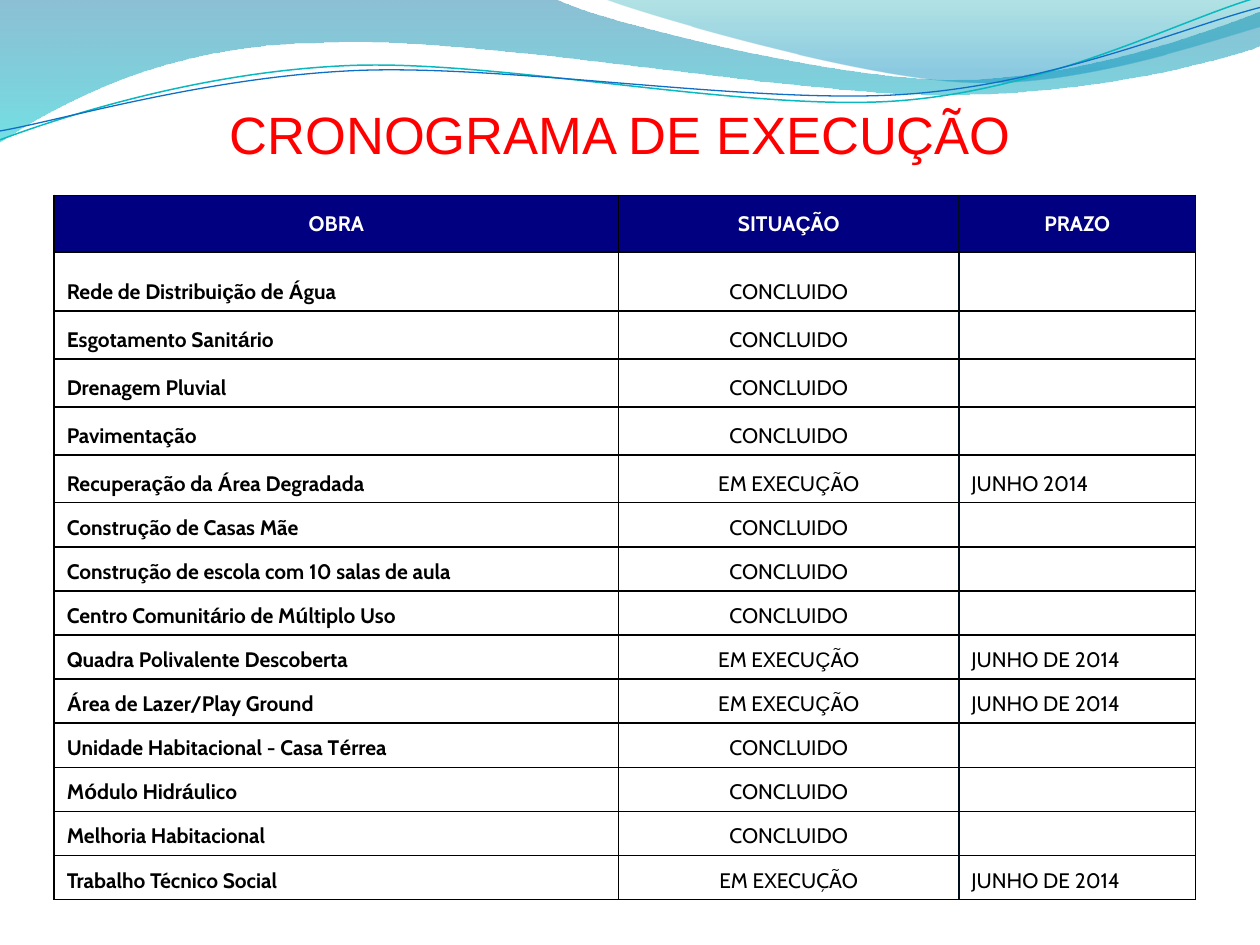
from dataclasses import dataclass
from itertools import groupby
from math import cos, radians, sin

from lxml import etree
from pptx import Presentation
from pptx.dml.color import RGBColor
from pptx.enum.text import MSO_ANCHOR, PP_ALIGN
from pptx.oxml.ns import qn
from pptx.util import Inches, Pt

LEFT, CENTER = PP_ALIGN.LEFT, PP_ALIGN.CENTER
MIDDLE, BOTTOM = MSO_ANCHOR.MIDDLE, MSO_ANCHOR.BOTTOM


@dataclass(frozen=True)
class Theme:
    title_font: str = "Arial"
    body_font: str = "Cabin"
    accent_font: str = "Arial"
    title_size: int = 30
    body_size: int = 12
    title: str = "FF0000"
    text: str = "000000"
    header_text: str = "FFFFFF"
    header_fill: str = "000080"
    border: str = "000000"
    divider: str = "000D1A"
    teal_line: str = "0AB8BF"
    blue_line: str = "0F6FC6"
    # Gradient stops: position, colour, opacity in percent
    band: tuple = ((0, "0074A1", 45), (1, "00C6CF", 55))
    crest: tuple = ((0, "00A1A9", 30), (0.8, "008BBF", 45))


THEME = Theme()
ACCENTS = "çÇáÁéóú"  # letters set in the accent font
DONE, RUNNING = "CONCLUIDO", "EM EXECUÇÃO"
HEADER = ("OBRA", "SITUAÇÃO", "PRAZO")
WORKS = [
    ("Rede de Distribuição de Água", DONE, ""),
    ("Esgotamento Sanitário", DONE, ""),
    ("Drenagem Pluvial", DONE, ""),
    ("Pavimentação", DONE, ""),
    ("Recuperação da Área Degradada", RUNNING, "JUNHO 2014"),
    ("Construção de Casas Mãe", DONE, ""),
    ("Construção de escola com 10 salas de aula", DONE, ""),
    ("Centro Comunitário de Múltiplo Uso", DONE, ""),
    ("Quadra Polivalente Descoberta", RUNNING, "JUNHO DE 2014"),
    ("Área de Lazer/Play Ground", RUNNING, "JUNHO DE 2014"),
    ("Unidade Habitacional - Casa Térrea", DONE, ""),
    ("Módulo Hidráulico", DONE, ""),
    ("Melhoria Habitacional", DONE, ""),
    ("Trabalho Técnico Social", RUNNING, "JUNHO DE 2014"),
]
COL_WIDTHS = (4.48, 2.7, 1.88)
ROW_HEIGHTS = [0.45, 0.47] + [0.38] * 4 + [0.35] * 9

# Wave outlines: a 2-tuple is a straight step, a 6-tuple a Bézier step
BAND = [(0, -0.01), (4.4, -0.01), (4.76, 0.17, 6.64, 0.63, 7.58, 0.63),
        (8.53, 0.63, 9.58, 0.26, 10, 0.09), (10.01, 0.36),
        (9.83, 0.44, 8.7, 0.76, 7.46, 0.75), (6.22, 0.75, 3.82, 0.28, 2.57, 0.34),
        (1.29, 0.35, 0.46, 0.83, -0.01, 1.13), (0, -0.01)]
CREST = [(4.79, -0.01), (5.09, 0.11, 6.82, 0.62, 7.69, 0.65),
         (8.56, 0.69, 9.61, 0.32, 10, 0.21), (10, 0), (4.79, -0.01)]
TEAL_WAVE = [(0, 1.11), (0.48, 0.93, 1.58, 0.57, 2.77, 0.52),
             (3.95, 0.47, 5.93, 0.89, 7.13, 0.8), (8.33, 0.71, 9.38, 0.15, 9.98, -0.02)]
BLUE_WAVE = [(0, 1.04), (0.47, 0.96, 1.64, 0.61, 2.83, 0.56),
             (4.03, 0.51, 5.97, 0.83, 7.17, 0.75), (8.36, 0.67, 9.41, 0.21, 10, 0.06)]
WAVE_TILT = 2.7  # degrees counter-clockwise


def rgb(value):
    return RGBColor.from_string(value)


def level(step, pivot):
    """Turn the points of a step back by the wave tilt."""
    c, n = cos(radians(WAVE_TILT)), sin(radians(WAVE_TILT))
    turned = []
    for x, y in zip(step[::2], step[1::2]):
        dx, dy = x - pivot[0], y - pivot[1]
        turned += [pivot[0] + dx * c - dy * n, pivot[1] + dx * n + dy * c]
    return turned


def add_outline(shapes, outline, close):
    points = [(Inches(x), Inches(y)) for step in outline
              for x, y in zip(step[::2], step[1::2])]
    builder = shapes.build_freeform(*points[0])
    builder.add_line_segments(points[1:], close=close)
    sp = builder.convert_to_shape()
    sp.shadow.inherit = False
    # Join each three points of a Bézier step into one curve
    segments = iter(list(sp._element.iter(qn("a:lnTo"))))
    for step in outline[1:]:
        first = next(segments)
        if len(step) == 6:
            first.tag = qn("a:cubicBezTo")
            for _ in range(2):
                extra = next(segments)
                first.append(extra[0])
                extra.getparent().remove(extra)
    return sp


def add_wave_fill(s, outline, stops):
    sp = add_outline(s.shapes, outline, True)
    sp.line.fill.background()
    sp.fill.gradient()
    sp.fill.gradient_angle = 270
    for stop, (position, color, _) in zip(sp.fill.gradient_stops, stops):
        stop.position = position
        stop.color.rgb = rgb(color)
    for clr, (_, _, opacity) in zip(sp._element.spPr.iter(qn("a:srgbClr")), stops):
        etree.SubElement(clr, qn("a:alpha"), val=str(opacity * 1000))


def add_wave_line(group, outline, pivot, color, width):
    sp = add_outline(group.shapes, [level(step, pivot) for step in outline], False)
    sp.rotation = 360 - WAVE_TILT
    sp.fill.background()
    sp.line.color.rgb = rgb(color)
    sp.line.width = Pt(width)


def format_run(r, font, size, color, bold=False):
    r.font.name = font
    r.font.size = Pt(size)
    r.font.bold = bold
    r.font.color.rgb = rgb(color)


def add_title(s, text):
    sp = s.shapes.add_textbox(Inches(1.3), Inches(0.76), Inches(7.25), Inches(0.6))
    tf = sp.text_frame
    tf.word_wrap = True
    tf.text = text
    p = tf.paragraphs[0]
    p.alignment = CENTER
    format_run(p.runs[0], THEME.title_font, THEME.title_size, THEME.title)


def set_borders(cell, col):
    tcPr = cell._tc.get_or_add_tcPr()
    divided = {1: "R", 2: "L"}.get(col)
    for side in "LRTB":
        ln = etree.SubElement(tcPr, qn("a:ln" + side), w=str(Pt(1)))
        fill = etree.SubElement(ln, qn("a:solidFill"))
        color = THEME.divider if side == divided else THEME.border
        etree.SubElement(fill, qn("a:srgbClr"), val=color)


def fill_cell(cell, text, row, col):
    header = row == 0
    set_borders(cell, col)
    if header:
        cell.fill.solid()
        cell.fill.fore_color.rgb = rgb(THEME.header_fill)
    else:
        cell.fill.background()
    cell.vertical_anchor = MIDDLE if header else BOTTOM
    p = cell.text_frame.paragraphs[0]
    p.alignment = CENTER if header or col == 1 else LEFT
    if not text:  # keeps an empty row from growing
        etree.SubElement(p._p, qn("a:endParaRPr"), sz=str(THEME.body_size * 100))
    # The closing row uses the body font throughout
    accents = "" if row == len(WORKS) else ACCENTS
    for accented, letters in groupby(text, lambda letter: letter in accents):
        r = p.add_run()
        r.text = "".join(letters)
        format_run(r, THEME.accent_font if accented else THEME.body_font, THEME.body_size,
                   THEME.header_text if header else THEME.text, header or col == 0)


def add_schedule(s):
    rows = [HEADER] + WORKS
    table = s.shapes.add_table(len(rows), len(HEADER), Inches(0.43), Inches(1.55),
                               Inches(sum(COL_WIDTHS)), Inches(sum(ROW_HEIGHTS))).table
    table.first_row = table.horz_banding = False
    for column, width in zip(table.columns, COL_WIDTHS):
        column.width = Inches(width)
    for i, (values, height) in enumerate(zip(rows, ROW_HEIGHTS)):
        table.rows[i].height = Inches(height)
        for j, text in enumerate(values):
            fill_cell(table.cell(i, j), text, i, j)


def main():
    prs = Presentation()
    prs.slide_width, prs.slide_height = Inches(10), Inches(7.5)
    s = prs.slides.add_slide(prs.slide_layouts[6])
    # Wave decoration
    add_wave_fill(s, BAND, THEME.band)
    add_wave_fill(s, CREST, THEME.crest)
    waves = s.shapes.add_group_shape()
    add_wave_line(waves, TEAL_WAVE, (4.99, 0.58), THEME.teal_line, 0.85)
    add_wave_line(waves, BLUE_WAVE, (5, 0.59), THEME.blue_line, 0.75)
    # Schedule and title
    add_schedule(s)
    add_title(s, "CRONOGRAMA DE EXECUÇÃO")
    prs.save("out.pptx")


if __name__ == "__main__":
    main()
